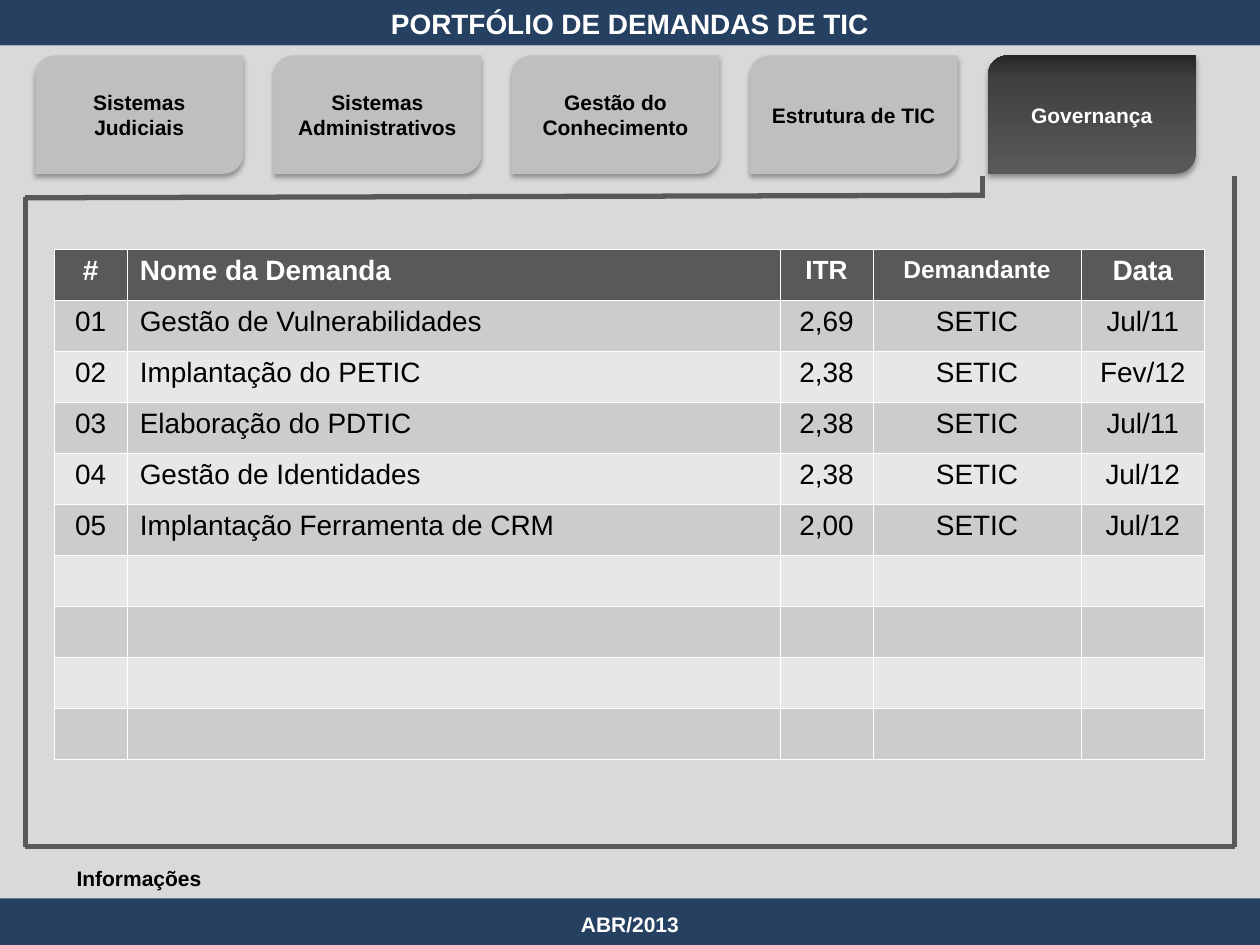
"""Build the IT demand portfolio slide for the governance area."""
from copy import deepcopy

from lxml.etree import SubElement
from pptx import Presentation
from pptx.dml.color import RGBColor
from pptx.enum.shapes import MSO_CONNECTOR, MSO_SHAPE
from pptx.enum.text import MSO_ANCHOR, PP_ALIGN
from pptx.oxml import parse_xml
from pptx.oxml.ns import nsdecls, qn
from pptx.util import Inches, Pt

WHITE = RGBColor(0xFF, 0xFF, 0xFF)
BLACK = RGBColor(0x00, 0x00, 0x00)
NAVY = RGBColor(0x25, 0x40, 0x61)
BACKDROP = RGBColor(0xD9, 0xD9, 0xD9)
TAB_GRAY = RGBColor(0xBF, 0xBF, 0xBF)
DARK_GRAY = RGBColor(0x59, 0x59, 0x59)
MEDIUM_DARK = RGBColor(0x40, 0x40, 0x40)
DARKEST = RGBColor(0x26, 0x26, 0x26)
ODD_ROW = RGBColor(0xCC, 0xCC, 0xCC)
EVEN_ROW = RGBColor(0xE7, 0xE7, 0xE7)


def write_text(frame, text, size=12, color=BLACK, bold=True,
               align=PP_ALIGN.CENTER, anchor=MSO_ANCHOR.MIDDLE):
    frame.word_wrap = True
    frame.vertical_anchor = anchor
    paragraph = frame.paragraphs[0]
    paragraph.alignment = align
    run = paragraph.add_run()
    run.text = text
    run.font.name = "Arial"
    run.font.size = Pt(size)
    run.font.bold = bold
    run.font.color.rgb = color


def add_box(slide, preset, left, top, width, height, color):
    shape = slide.shapes.add_shape(
        preset, Inches(left), Inches(top), Inches(width), Inches(height))
    shape.shadow.inherit = False
    shape.fill.solid()
    shape.fill.fore_color.rgb = color
    shape.line.fill.background()
    return shape


presentation = Presentation()
presentation.slide_width = Inches(10)
presentation.slide_height = Inches(7.5)
slide = presentation.slides.add_slide(presentation.slide_layouts[6])

for top, height, color in [(0.36, 6.85, BACKDROP), (7.13, 0.37, NAVY), (-0.01, 0.37, NAVY)]:
    add_box(slide, MSO_SHAPE.RECTANGLE, 0, top, 10, height, color)

labels = [
    (0, 7.14, 10, 0.39, "ABR/2013", {"color": WHITE}),
    (0, 0, 10, 0.37, "PORTFÓLIO DE DEMANDAS DE TIC",
     {"size": 16, "color": WHITE, "anchor": MSO_ANCHOR.TOP}),
    (0.51, 6.82, 1.26, 0.3, "Informações",
     {"align": PP_ALIGN.LEFT, "anchor": MSO_ANCHOR.TOP}),
]
for left, top, width, height, text, text_format in labels:
    box = slide.shapes.add_textbox(Inches(left), Inches(top), Inches(width), Inches(height))
    write_text(box.text_frame, text, **text_format)

frame_lines = [
    (0.2, 1.56, 0.2, 6.72),
    (0.2, 6.72, 9.8, 6.72),
    (9.8, 6.72, 9.8, 1.55),
    (9.8, 1.57, 9.8, 1.4),
    (7.79, 1.55, 0.2, 1.57),
    (7.8, 1.57, 7.8, 1.4),
]
for points in frame_lines:
    line = slide.shapes.add_connector(MSO_CONNECTOR.STRAIGHT, *map(Inches, points))
    line.line.color.rgb = DARK_GRAY
    line.line.width = Pt(3)
    SubElement(line._element.spPr, qn("a:effectLst"))

tabs = ["Sistemas Judiciais", "Sistemas Administrativos", "Gestão do Conhecimento",
        "Estrutura de TIC", "Governança"]
for index, name in enumerate(tabs):
    active = name == "Governança"
    tab = add_box(slide, MSO_SHAPE.ROUND_2_DIAG_RECTANGLE,
                  0.28 + index * 1.89, 0.44, 1.65, 0.94, TAB_GRAY)
    properties = tab._element.spPr
    properties.find(qn("a:effectLst")).append(parse_xml(
        f'<a:outerShdw {nsdecls("a")} blurRad="{Pt(3.1)}" dist="{Pt(1.8)}" dir="5400000" '
        'rotWithShape="0"><a:srgbClr val="000000"><a:alpha val="35000"/></a:srgbClr>'
        '</a:outerShdw>'))
    if active:
        tab.fill.gradient()
        tab.fill.gradient_angle = 90
        stop_list = properties.find(qn("a:gradFill")).find(qn("a:gsLst"))
        stop_list.append(deepcopy(stop_list[-1]))
        gradient = [(0, DARK_GRAY), (0.8, MEDIUM_DARK), (1, DARKEST)]
        for stop, (position, color) in zip(tab.fill.gradient_stops, gradient):
            stop.position = position
            stop.color.rgb = color
    write_text(tab.text_frame, name, color=WHITE if active else BLACK)

column_widths = [0.58, 5.18, 0.74, 1.65, 0.98]
header_sizes = [16, 16, 15, 14, 16]
rows = [
    ["#", "Nome da Demanda", "ITR", "Demandante", "Data"],
    ["01", "Gestão de Vulnerabilidades", "2,69", "SETIC", "Jul/11"],
    ["02", "Implantação do PETIC", "2,38", "SETIC", "Fev/12"],
    ["03", "Elaboração do PDTIC", "2,38", "SETIC", "Jul/11"],
    ["04", "Gestão de Identidades", "2,38", "SETIC", "Jul/12"],
    ["05", "Implantação Ferramenta de CRM", "2,00", "SETIC", "Jul/12"],
] + [[""] * 5] * 4
table = slide.shapes.add_table(
    len(rows), len(column_widths),
    Inches(0.43), Inches(1.98), Inches(9.13), Inches(4.05)).table
for column, width in zip(table.columns, column_widths):
    column.width = Inches(width)
for row_index, values in enumerate(rows):
    header = row_index == 0
    row_color = DARK_GRAY if header else ODD_ROW if row_index % 2 else EVEN_ROW
    for column_index, value in enumerate(values):
        cell = table.cell(row_index, column_index)
        for side in ("lnL", "lnR", "lnT", "lnB"):
            cell._tc.get_or_add_tcPr().append(parse_xml(
                f'<a:{side} {nsdecls("a")} w="{Pt(0.5)}"><a:solidFill>'
                f'<a:srgbClr val="{WHITE}"/></a:solidFill></a:{side}>'))
        cell.fill.solid()
        cell.fill.fore_color.rgb = row_color
        if value:
            write_text(cell.text_frame, value,
                       size=header_sizes[column_index] if header else 16,
                       color=WHITE if header else BLACK, bold=header,
                       align=PP_ALIGN.LEFT if column_index == 1 else PP_ALIGN.CENTER,
                       anchor=MSO_ANCHOR.TOP)

presentation.save("out.pptx")
